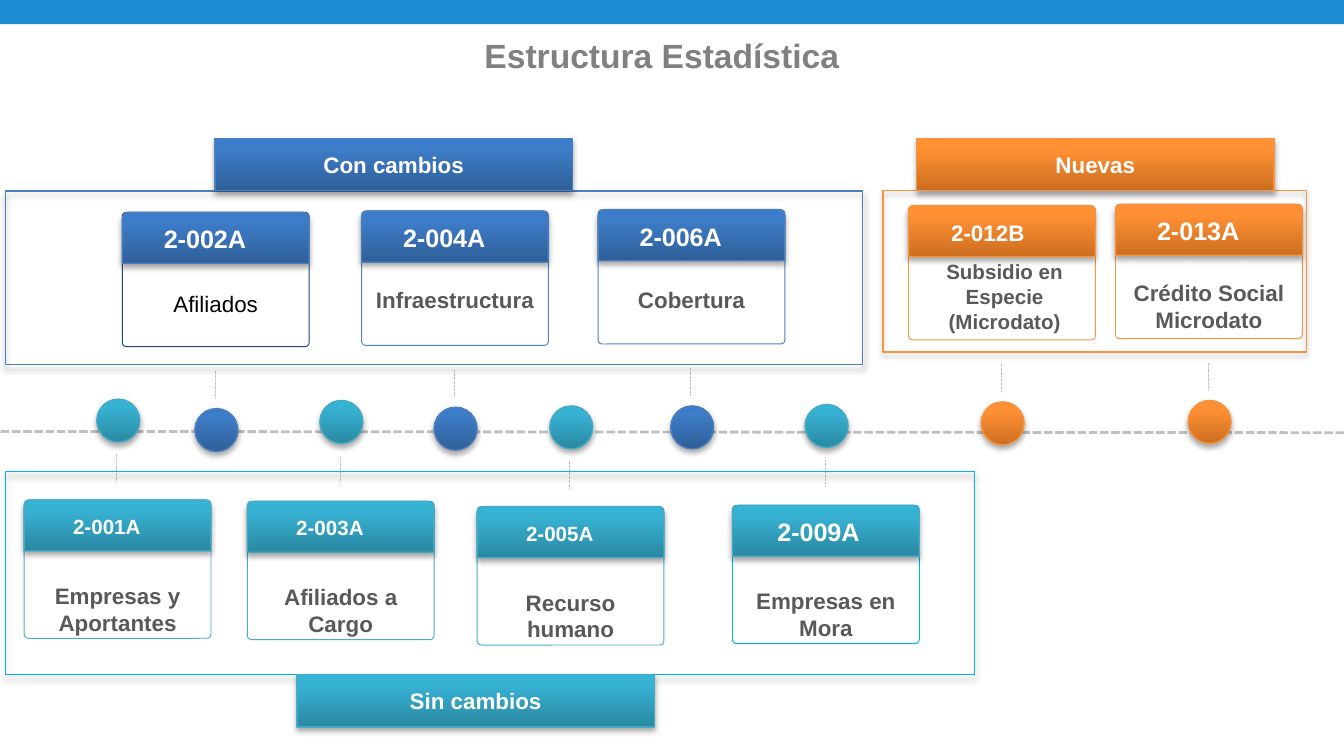
from copy import deepcopy
from dataclasses import dataclass

from pptx import Presentation
from pptx import util as u
from pptx.dml.color import RGBColor
from pptx.enum import dml, shapes, text
from pptx.oxml import ns, parse_xml

KIND = shapes.MSO_SHAPE
BLUE = ("2F5F99", "3D7CC7", "3A7CCB", "4B7EBC")
TEAL = ("2A88A2", "37B1D2", "34B4D6", "46AAC5")
GOLD = ("CC6E20", "FF9034", "FF9136", "F69240")
SHADE = (
    f'<a:effectLst {ns.nsdecls("a")}>'
    '<a:outerShdw blurRad="40000" dist="23000" dir="5400000" rotWithShape="0">'
    '<a:srgbClr val="000000"><a:alpha val="35000"/></a:srgbClr>'
    "</a:outerShdw></a:effectLst>"
)


@dataclass
class Card:
    code: str
    name: str
    left: float
    top: float
    edge: str
    size: float = 13.5
    drop: float = 0.52
    shift: float = 0
    body: float = 12
    ink: str = "595959"
    bold: bool = True
    pad: float = 0.2


def tint(code):
    return RGBColor.from_string(code)


def write(shape, words, size, ink, bold=True, pads=(0.1, 0.05, 0.1, 0.05),
          anchor=text.MSO_ANCHOR.MIDDLE):
    frame = shape.text_frame
    frame.text = words
    frame.word_wrap = True
    frame.auto_size = text.MSO_AUTO_SIZE.NONE
    frame.vertical_anchor = anchor
    frame.margin_left, frame.margin_top, frame.margin_right, frame.margin_bottom = map(u.Inches, pads)
    line = frame.paragraphs[0]
    line.alignment = text.PP_ALIGN.CENTER
    font = line.runs[0].font
    font.name, font.size, font.bold = "Arial", u.Pt(size), bold
    font.color.rgb = tint(ink)


def draw(tree, kind, box, edge=None, width=0.75, look=None, shade=True):
    shape = tree.add_shape(kind, *map(u.Inches, box))
    shape.shadow.inherit = False
    if look:
        shape.fill.gradient()
        shape.fill.gradient_angle = 90
        stop = shape._element.spPr.find(".//" + ns.qn("a:gs"))
        stop.addnext(deepcopy(stop))
        for stop, spot, code in zip(shape.fill.gradient_stops, (0, 0.8, 1), look):
            stop.position = spot
            stop.color.rgb = tint(code)
    else:
        shape.fill.background()
    if edge:
        shape.line.color.rgb = tint(edge)
        shape.line.width = u.Pt(width)
    else:
        shape.line.fill.background()
    if shade:
        props = shape._element.spPr
        props.remove(props.find(ns.qn("a:effectLst")))
        props.append(parse_xml(SHADE))
    return shape


def dash(tree, start, end, width):
    line = tree.add_connector(shapes.MSO_CONNECTOR.STRAIGHT, *map(u.Inches, start + end))
    line.line.color.rgb = tint("BFBFBF")
    line.line.width = u.Pt(width)
    line.line.dash_style = dml.MSO_LINE.SQUARE_DOT
    line._element.spPr.append(parse_xml(f'<a:effectLst {ns.nsdecls("a")}/>'))


def add_card(page, card, look, tall, dot, link):
    tree = page.shapes.add_group_shape().shapes
    left, top = card.left, card.top
    mid = left + 0.69
    dash(tree, (mid, top + link), (mid, top + link + 0.2), 0.5)
    draw(tree, KIND.OVAL, (left + 0.54, top + dot, 0.32, 0.32), look[3], look=look)
    case = draw(tree, KIND.ROUNDED_RECTANGLE, (left, top, 1.39, tall), card.edge, 0.5, shade=False)
    case.adjustments[0] = 0.03
    head = draw(tree, KIND.ROUND_2_SAME_RECTANGLE, (left, top, 1.39, 0.38), look[3], look=look)
    head.adjustments[0] = 0.13
    write(head, card.code, card.size, "FFFFFF", pads=(0.04, 0.04, card.pad, 0.04))
    deep = tall - card.drop
    box = (left + card.shift, top + card.drop, 1.39, deep)
    label = tree.add_textbox(*map(u.Inches, box))
    write(label, card.name, card.body, card.ink, card.bold, (0.04,) * 4, text.MSO_ANCHOR.TOP)


def add_zone(page, box, look, edge, name, tab, cards, above):
    left, top, wide, tall = box
    plan = (1, 1.46, 1.18) if above else (1.03, -0.75, -0.34)
    for card in cards:
        add_card(page, card, look, *plan)
    draw(page.shapes, KIND.RECTANGLE, box, edge)
    side = top - 0.39 if above else top + tall
    flag = draw(page.shapes, KIND.RECTANGLE, (left + tab, side, 2.66, 0.39), look[3], look=look)
    write(flag, name, 12, "FFFFFF")


def add_top(page, box):
    left, top, wide, tall = box
    band = draw(page.shapes, KIND.RECTANGLE, (left, top, wide, 0.19), shade=False)
    band.fill.solid()
    band.fill.fore_color.rgb = tint("1B8BD4")
    title = page.shapes.title
    title.left, title.top = u.Inches(left + 2.56), u.Inches(top + 0.22)
    title.width, title.height = u.Inches(4.73), u.Inches(0.4)
    write(title, "Estructura Estadística", 18, "808080", anchor=text.MSO_ANCHOR.TOP)


def main():
    deck = Presentation()
    deck.slide_width = u.Inches(10)
    deck.slide_height = deck.slide_width * 9 // 16
    page = deck.slides.add_slide(deck.slide_layouts[5])
    add_top(page, (0, -0.01, 10, 0.62))
    dash(page.shapes, (10, 3.22), (0, 3.21), 1.5)
    add_zone(page, (0.04, 3.51, 7.21, 1.51), TEAL, "00B0F0", "Sin cambios", 2.17, [
        Card("2-001A", "Empresas y Aportantes", 0.18, 3.72, "4BACC6", 11, 0.57),
        Card("2-003A", "Afiliados a Cargo", 1.84, 3.73, "4BACC6", 11, 0.57),
        Card("2-005A", "Recurso humano", 3.55, 3.77, "4BACC6", 11, 0.57),
        Card("2-009A", "Empresas en Mora", 5.45, 3.76, "00B0F0", drop=0.57, pad=0.15),
    ], False)
    add_zone(page, (0.04, 1.42, 6.38, 1.29), BLUE, BLUE[3], "Con cambios", 1.56, [
        Card("2-002A", "Afiliados", 0.91, 1.58, "1F497D", drop=0.54, ink="000000", bold=False),
        Card("2-004A", "Infraestructura", 2.69, 1.57, "4F81BD"),
        Card("2-006A", "Cobertura", 4.45, 1.56, "4F81BD", drop=0.53),
    ], True)
    add_zone(page, (6.57, 1.42, 3.15, 1.2), GOLD, GOLD[3], "Nuevas", 0.25, [
        Card("2-012B", "Subsidio en Especie (Microdato)", 6.76, 1.53, "F79646", 12, 0.36, 0.02, 11,
             pad=0.25),
        Card("2-013A", "Crédito Social Microdato", 8.3, 1.52, "F79646"),
    ], True)
    deck.save("out.pptx")


if __name__ == "__main__":
    main()
